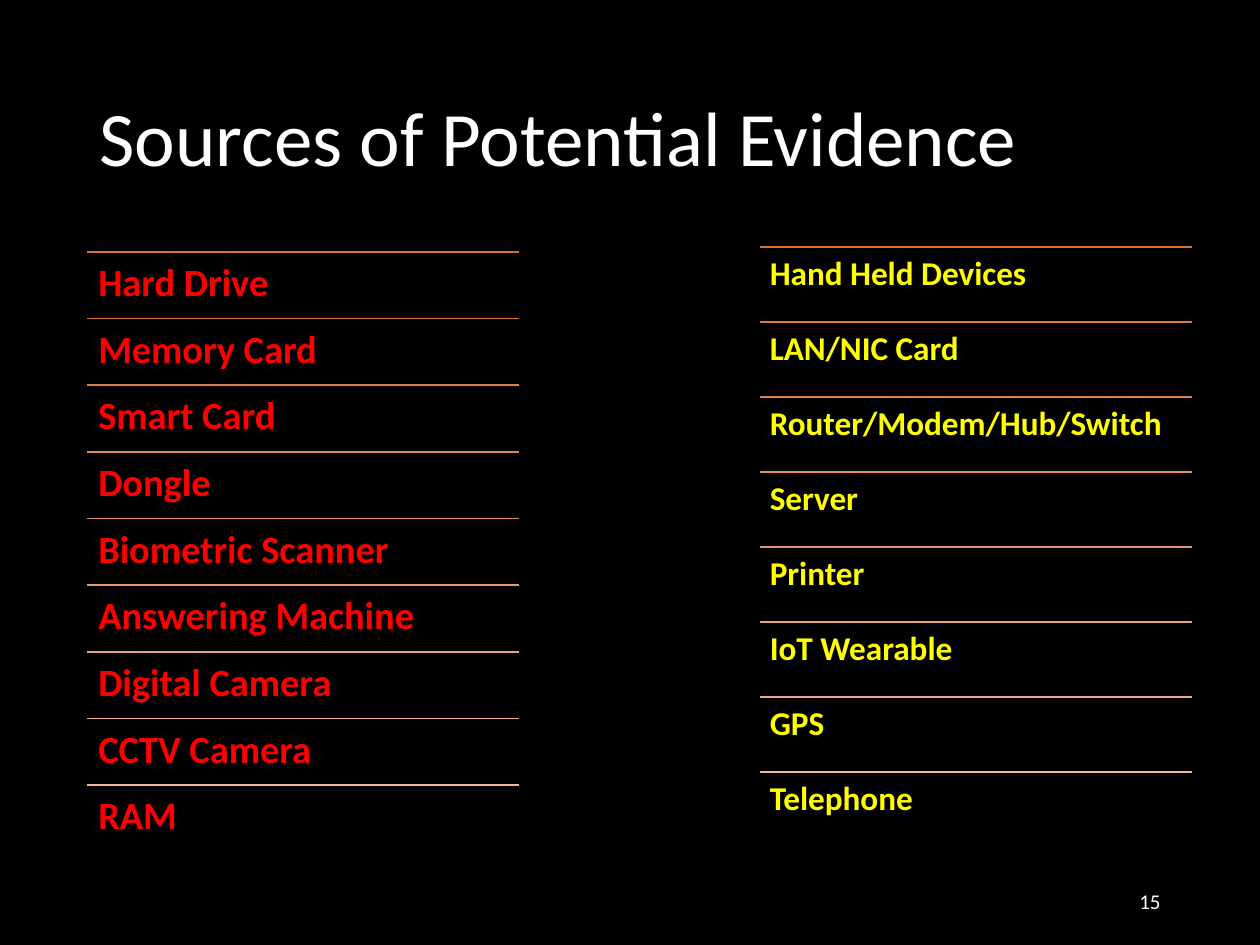
from lxml.etree import SubElement
from pptx import Presentation
from pptx.dml.color import RGBColor
from pptx.enum.shapes import MSO_CONNECTOR
from pptx.enum.text import MSO_ANCHOR, MSO_AUTO_SIZE, PP_ALIGN
from pptx.oxml.ns import qn
from pptx.util import Inches, Pt

TITLE = "Sources of Potential Evidence"
PAGE_NUMBER = "15"
COLUMN_WIDTH, COLUMN_HEIGHT = 3.43, 4.76
COLUMNS = [
    {
        "left": 0.69, "top": 2, "size": 22, "color": "FF0000", "inset": 0.09,
        "rows": [
            ("Hard Drive", "D7712C"),
            ("Memory Card", "DB7839"),
            ("Smart Card", "DF7F47"),
            ("Dongle", "E38754"),
            ("Biometric Scanner", "E78F62"),
            ("Answering Machine", "EA9770"),
            ("Digital Camera", "EDA07E"),
            ("CCTV Camera", "F0A98C"),
            ("RAM", "F3B39B"),
        ],
    },
    {
        "left": 6.03, "top": 1.96, "size": 19, "color": "FFFF00", "inset": 0.08,
        "rows": [
            ("Hand Held Devices", "D7712C"),
            ("LAN/NIC Card", "DC793B"),
            ("Router/Modem/Hub/Switch", "E0814B"),
            ("Server", "E58A5A"),
            ("Printer", "E9936A"),
            ("IoT Wearable", "EC9D7A"),
            ("GPS", "F0A88A"),
            ("Telephone", "F3B39B"),
        ],
    },
]


def rgb(color):
    return RGBColor.from_string(color)


def write(box, text, size, color="FFFFFF", bold=False, align=PP_ALIGN.LEFT,
          anchor=MSO_ANCHOR.MIDDLE, inset=None, line_spacing=0.9):
    frame = box.text_frame
    frame.word_wrap = True
    frame.auto_size = MSO_AUTO_SIZE.NONE
    frame.vertical_anchor = anchor
    if inset is not None:
        frame.margin_left = frame.margin_right = Inches(inset)
        frame.margin_top = frame.margin_bottom = Inches(inset)
    para = frame.paragraphs[0]
    para.alignment = align
    para.line_spacing = line_spacing
    span = para.add_run()
    span.text = text
    span.font.name = "Calibri"
    span.font.size = Pt(size)
    span.font.bold = bold
    span.font.color.rgb = rgb(color)


def add_rule(shapes, left, top, width, color):
    rule = shapes.add_connector(MSO_CONNECTOR.STRAIGHT, Inches(left), Inches(top),
                                Inches(left + width), Inches(top))
    rule.line.color.rgb = rgb(color)
    rule.line.width = Pt(1)
    SubElement(rule._element.spPr, qn("a:effectLst"))


def add_column(page, column):
    shapes = page.shapes.add_group_shape().shapes
    left = column["left"]
    row_height = COLUMN_HEIGHT / len(column["rows"])
    for index, (label, rule_color) in enumerate(column["rows"]):
        top = column["top"] + index * row_height
        add_rule(shapes, left, top, COLUMN_WIDTH, rule_color)
        box = shapes.add_textbox(Inches(left), Inches(top),
                                 Inches(COLUMN_WIDTH), Inches(row_height))
        write(box, label, column["size"], column["color"], bold=True,
              anchor=MSO_ANCHOR.TOP, inset=column["inset"])


def main():
    deck = Presentation()
    deck.slide_width, deck.slide_height = Inches(10), Inches(7.5)
    page = deck.slides.add_slide(deck.slide_layouts[5])
    page.background.fill.solid()
    page.background.fill.fore_color.rgb = rgb("000000")

    title = page.shapes.title
    title.left, title.top = Inches(0.69), Inches(0.4)
    title.width, title.height = Inches(8.62), Inches(1.45)
    write(title, TITLE, 44)

    for column in COLUMNS:
        add_column(page, column)

    number = page.shapes.add_textbox(Inches(7.06), Inches(6.95), Inches(2.25), Inches(0.4))
    write(number, PAGE_NUMBER, 12, align=PP_ALIGN.RIGHT, line_spacing=1.0)
    deck.save("out.pptx")


if __name__ == "__main__":
    main()
